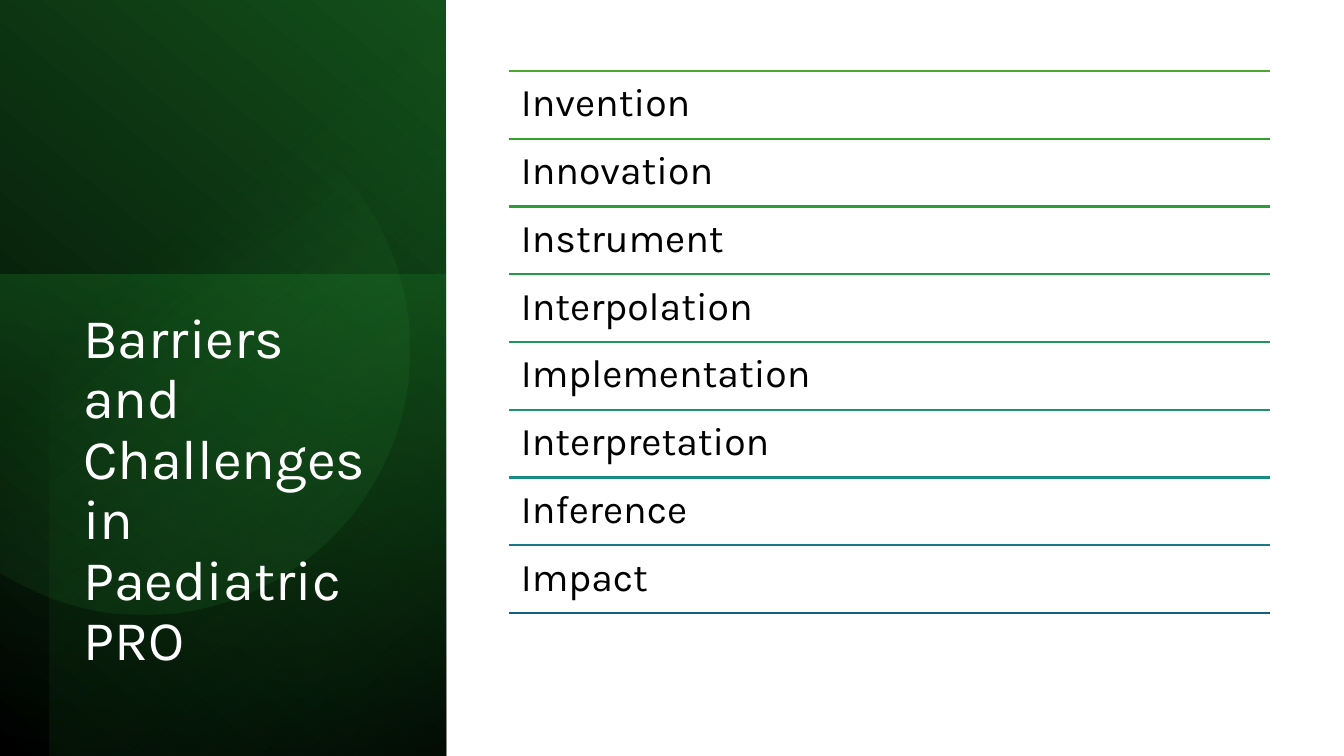
from math import acos, cos, pi, sin

from lxml.etree import SubElement
from pptx import Presentation
from pptx.dml.color import RGBColor
from pptx.enum.shapes import MSO_CONNECTOR, MSO_SHAPE
from pptx.enum.text import MSO_ANCHOR, MSO_AUTO_SIZE, PP_ALIGN
from pptx.oxml import parse_xml
from pptx.oxml.ns import nsdecls, qn
from pptx.util import Pt

THEME = {
    "font": "Karla",
    "title_size": Pt(40),
    "item_size": Pt(28),
    "rule_width": Pt(1.5),
    "title": RGBColor.from_string("FFFFFF"),
    "item": RGBColor.from_string("000000"),
    "black": "000000",
    "deep": "0D3612",
    "forest": "13501B",
    "green": "196B24",
    "bright": "47D45A",
    "rules": ["4EA72E", "32A32A", "279F36", "249A4A", "20965E",
              "1D9171", "1A8C83", "187A87", "156082"],
}
ITEMS = ["Invention", "Innovation", "Instrument", "Interpolation",
         "Implementation", "Interpretation", "Inference", "Impact"]
EMU_PER_PX = 914400 / 100.8


def px(length):
    return round(length * EMU_PER_PX)


def paint_gradient(shape, angle, stops):
    """Fill with (position %, colour, opacity %) stops; angle runs clockwise."""
    shape.shadow.inherit = False
    shape.line.fill.background()
    shape.fill.background()
    stop_xml = "".join(
        f'<a:gs pos="{position * 1000}"><a:srgbClr val="{colour}">'
        f'<a:alpha val="{opacity * 1000}"/></a:srgbClr></a:gs>'
        for position, colour, opacity in stops)
    gradient = parse_xml(
        f'<a:gradFill {nsdecls("a")} rotWithShape="1"><a:gsLst>{stop_xml}</a:gsLst>'
        f'<a:lin ang="{angle * 60000}" scaled="0"/></a:gradFill>')
    properties = shape.element.spPr
    properties.replace(properties.find(qn("a:noFill")), gradient)


deck = Presentation()
deck.slide_width, deck.slide_height = px(1344), px(756)
page = deck.slides.add_slide(deck.slide_layouts[5])

# Green side panel: base, lower glow, dark corner
PANELS = [
    (0, 0, 446, 756, 310, [(0, THEME["black"], 100), (100, THEME["forest"], 100)]),
    (0, 275, 446, 481, 100, [(0, THEME["green"], 50), (100, THEME["deep"], 0)]),
    (50, 0, 396, 756, 230, [(0, THEME["black"], 59), (69, THEME["green"], 0)]),
]
for left, top, width, height, angle, stops in PANELS:
    panel = page.shapes.add_shape(MSO_SHAPE.RECTANGLE, px(left), px(top),
                                  px(width), px(height))
    paint_gradient(panel, angle, stops)

# Circle cut off by the left slide edge
center_x, center_y, radius, steps = 144, 350, 265, 120
reach = acos(-center_x / radius)
angles = [-reach + 2 * reach * step / steps for step in range(steps + 1)]
arc = [(px(center_x + radius * cos(turn)), px(center_y + radius * sin(turn)))
       for turn in angles]
builder = page.shapes.build_freeform(*arc[0])
builder.add_line_segments(arc[1:], close=True)
paint_gradient(builder.convert_to_shape(), 52,
               [(39, THEME["bright"], 0), (100, THEME["forest"], 26)])

# Title, brought in front of the panel
title = page.shapes.title
page.shapes.element.append(title.element)
title.left, title.top, title.width, title.height = px(73), px(305), px(318), px(339)
frame = title.text_frame
frame.text = "Barriers and Challenges in Paediatric PRO"
frame.word_wrap = True
frame.auto_size = MSO_AUTO_SIZE.NONE
frame.vertical_anchor = MSO_ANCHOR.TOP
para = frame.paragraphs[0]
para.alignment = PP_ALIGN.LEFT
para.line_spacing = 0.9
span = para.runs[0]
span.font.name, span.font.size = THEME["font"], THEME["title_size"]
span.font.color.rgb = THEME["title"]

# Ruled list: one rule above each item and a last one below
list_left, list_top, list_width, list_height = 509, 71, 761, 542
row_height = list_height / len(ITEMS)
for row, colour in enumerate(THEME["rules"]):
    top = px(list_top + row * row_height)
    rule = page.shapes.add_connector(MSO_CONNECTOR.STRAIGHT, px(list_left), top,
                                     px(list_left + list_width), top)
    rule.line.color.rgb = RGBColor.from_string(colour)
    rule.line.width = THEME["rule_width"]
    SubElement(rule.element.spPr, qn("a:effectLst"))

for row, item in enumerate(ITEMS):
    box = page.shapes.add_textbox(px(list_left), px(list_top + row * row_height),
                                  px(list_width), px(row_height))
    frame = box.text_frame
    frame.text = item
    frame.word_wrap = True
    frame.margin_left = frame.margin_right = px(12)
    frame.margin_top = frame.margin_bottom = px(12)
    para = frame.paragraphs[0]
    para.line_spacing = 0.9
    span = para.runs[0]
    span.font.name, span.font.size = THEME["font"], THEME["item_size"]
    span.font.color.rgb = THEME["item"]

deck.save("out.pptx")
